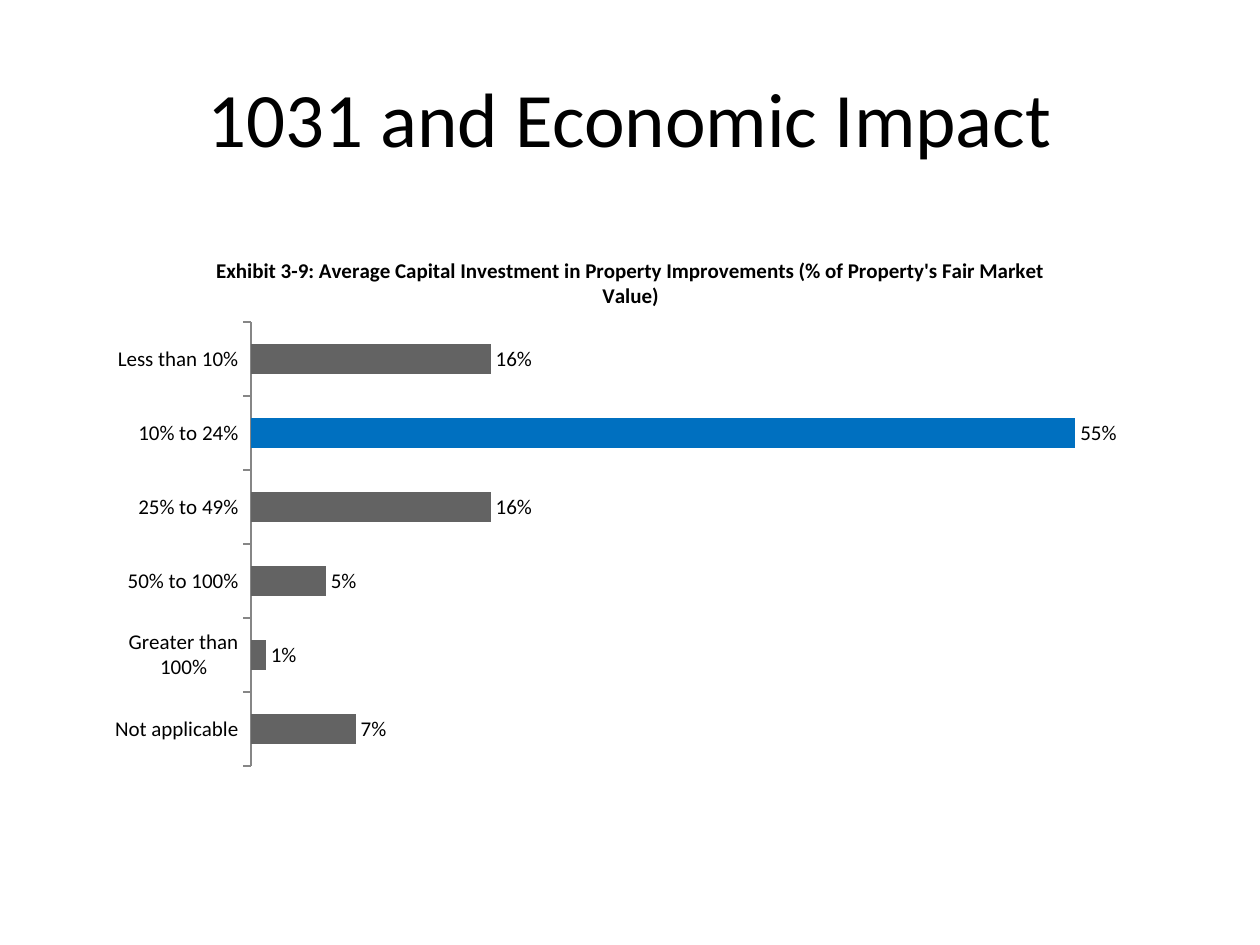
from lxml.etree import SubElement
from pptx import Presentation
from pptx.chart.data import CategoryChartData as ChartData
from pptx.dml.color import RGBColor as Color
from pptx.enum.chart import XL_CHART_TYPE as ChartType
from pptx.enum.chart import XL_LABEL_POSITION as LabelPosition
from pptx.enum.chart import XL_TICK_LABEL_POSITION as TickLabels
from pptx.enum.chart import XL_TICK_MARK as TickMark
from pptx.enum.text import MSO_ANCHOR as Anchor
from pptx.enum.text import PP_ALIGN as Align
from pptx.oxml.ns import qn
from pptx.util import Inches, Pt

COLORS = {"text": "000000", "bar": "636363", "highlight": "0070C0", "axis": "868686"}
INVESTMENT = {
    "Less than 10%": 0.16,
    "10% to 24%": 0.55,
    "25% to 49%": 0.16,
    "50% to 100%": 0.05,
    "Greater than 100%": 0.01,
    "Not applicable": 0.07,
}


class SlideBuilder:
    """Holds the style and the current slide, and adds each kind of element."""

    def __init__(self, slide, font_name="Calibri"):
        self.slide = slide
        self.font_name = font_name

    def color(self, name):
        return Color.from_string(COLORS[name])

    def style(self, font, size, bold=False):
        font.name = self.font_name
        font.size = Pt(size)
        font.bold = bold
        font.color.rgb = self.color("text")

    def fill(self, element, name):
        element.format.fill.solid()
        element.format.fill.fore_color.rgb = self.color(name)

    def place(self, parent, position, **fractions):
        for old in parent.findall(qn("c:layout")):
            parent.remove(old)
        layout = SubElement(parent, qn("c:layout"))
        parent.insert(position, layout)
        manual = SubElement(layout, qn("c:manualLayout"))
        for key, value in fractions.items():
            SubElement(manual, qn(f"c:{key}")).set("val", str(value))

    def title(self, text, left, top, width, height):
        box = self.slide.shapes.title
        box.left, box.top = Inches(left), Inches(top)
        box.width, box.height = Inches(width), Inches(height)
        box.text_frame.vertical_anchor = Anchor.MIDDLE
        para = box.text_frame.paragraphs[0]
        para.alignment = Align.CENTER
        span = para.add_run()
        span.text = text
        self.style(span.font, 44)

    def bar_chart(self, heading, values, highlight, left, top, width, height):
        data = ChartData(number_format="0%")
        data.categories = list(values)
        data.add_series("Series 1", list(values.values()))
        frame = self.slide.shapes.add_chart(
            ChartType.BAR_CLUSTERED, Inches(left), Inches(top),
            Inches(width), Inches(height), data)
        chart = frame.chart
        self.style(chart.font, 10)
        chart.has_legend = False
        self.chart_title(chart, heading)
        self.axes(chart)
        self.bars(chart.plots[0], list(values).index(highlight))
        plot_area = chart.element.find(f".//{qn('c:plotArea')}")
        self.place(plot_area, 0, layoutTarget="inner", xMode="edge", yMode="edge",
                   x=0.146, y=0.168, w=0.84, h=0.814)

    def chart_title(self, chart, text):
        chart.has_title = True
        span = chart.chart_title.text_frame.paragraphs[0].add_run()
        span.text = text
        self.style(span.font, 12, bold=True)
        chart.chart_title.include_in_layout = False
        title = chart.element.find(f".//{qn('c:title')}")
        self.place(title, 1, xMode="edge", yMode="edge", x=0.11, y=0.04)

    def axes(self, chart):
        categories, scale = chart.category_axis, chart.value_axis
        categories.reverse_order = True
        categories.major_tick_mark = TickMark.OUTSIDE
        categories.tick_label_position = TickLabels.NEXT_TO_AXIS
        categories.format.line.color.rgb = self.color("axis")
        self.style(categories.tick_labels.font, 12)
        scale.minimum_scale, scale.maximum_scale = 0, 0.6
        scale.has_major_gridlines = False
        scale.visible = False

    def bars(self, plot, highlight):
        plot.gap_width = 150
        plot.vary_by_categories = False
        series = plot.series[0]
        series.invert_if_negative = False
        self.fill(series, "bar")
        self.fill(series.points[highlight], "highlight")
        labels = series.data_labels
        labels.show_value = True
        labels.position = LabelPosition.OUTSIDE_END
        labels.number_format = "0%"
        labels.number_format_is_linked = False
        self.style(labels.font, 12)


def main():
    deck = Presentation()
    deck.slide_width, deck.slide_height = Inches(10), Inches(7.5)
    page = SlideBuilder(deck.slides.add_slide(deck.slide_layouts[5]))
    page.title("1031 and Economic Impact", 0.5, 0.3, 9, 1.25)
    page.bar_chart(
        "Exhibit 3-9: Average Capital Investment in Property Improvements "
        "(% of Property's Fair Market Value)",
        INVESTMENT, "10% to 24%", 0.75, 1.83, 8.5, 4.33)
    deck.save("out.pptx")


if __name__ == "__main__":
    main()
